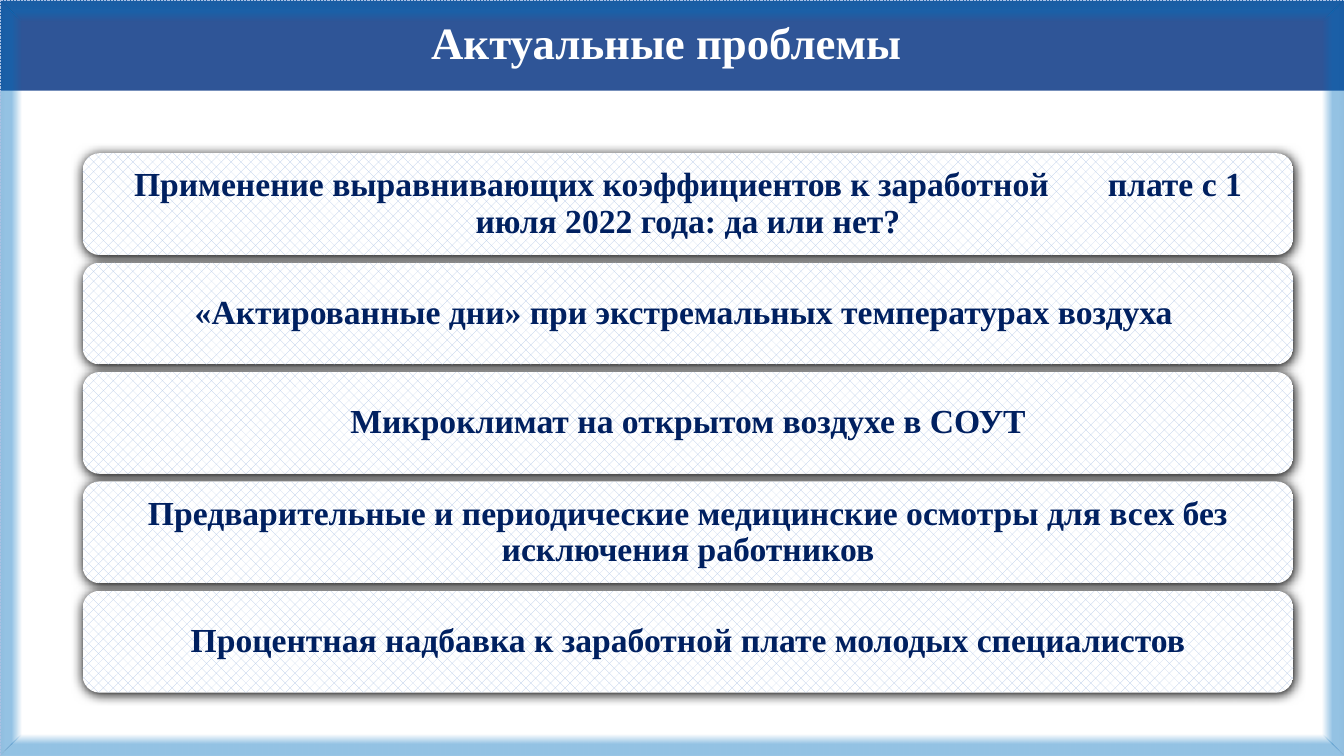
from lxml import etree
from pptx import Presentation, util as u
from pptx.dml.color import RGBColor
from pptx.enum import dml, shapes, text
from pptx.oxml.ns import qn

WHITE = RGBColor(0xFF, 0xFF, 0xFF)
BAND_BLUE = RGBColor(0x2F, 0x55, 0x97)
NAVY = RGBColor(0x00, 0x20, 0x60)
PALE_BLUE = RGBColor(0xB4, 0xC7, 0xE7)
EDGE_BLUE = RGBColor(0x00, 0x70, 0xC0)
OUTLINE_BLUE = RGBColor(0xAB, 0xC0, 0xE4)
FONT = "Times New Roman"

PROBLEMS = [
    "Применение выравнивающих коэффициентов к заработной плате с 1 июля 2022 года: да или нет?",
    "«Актированные дни» при экстремальных температурах воздуха ",
    "Микроклимат на открытом воздухе в СОУТ",
    "Предварительные и периодические медицинские осмотры для всех без исключения работников",
    "Процентная надбавка к заработной плате молодых специалистов",
]


def write(shape, content, size, color, inset=0.1, gap_after=None):
    """Write centred bold text; the space following gap_after is widened."""
    frame = shape.text_frame
    frame.word_wrap = True
    frame.auto_size = text.MSO_AUTO_SIZE.NONE
    frame.vertical_anchor = text.MSO_ANCHOR.MIDDLE
    frame.margin_left = frame.margin_right = u.Inches(inset)
    frame.margin_top = frame.margin_bottom = u.Inches(inset)
    paragraph = frame.paragraphs[0]
    paragraph.alignment = text.PP_ALIGN.CENTER
    paragraph.line_spacing = 0.9
    pieces = [content]
    if gap_after:
        before, word, after = content.partition(gap_after)
        pieces = [before + word, " ", after.lstrip()]
    for piece in pieces:
        run = paragraph.add_run()
        run.text = piece
        run.font.name = FONT
        run.font.size = u.Pt(size)
        run.font.bold = True
        run.font.color.rgb = color
        if piece == " ":
            run.font._element.set("spc", "3600")


def add_shadow(shape, opacity, blur, distance):
    """Drop a black shadow straight down; blur and distance in points."""
    shape.shadow.inherit = False
    effects = shape._element.spPr.find(qn("a:effectLst"))
    shadow = etree.SubElement(effects, qn("a:outerShdw"), blurRad=str(u.Pt(blur)),
                              dist=str(u.Pt(distance)), dir="5400000",
                              algn="ctr", rotWithShape="0")
    black = etree.SubElement(shadow, qn("a:srgbClr"), val="000000")
    etree.SubElement(black, qn("a:alpha"), val=str(opacity * 1000))


class ProblemsSlide:
    """Slide whose lengths are percentages of its width and height."""

    def __init__(self, deck):
        self.width, self.height = deck.slide_width, deck.slide_height
        self.slide = deck.slides.add_slide(deck.slide_layouts[5])
        self.slide.background.fill.solid()
        self.slide.background.fill.fore_color.rgb = WHITE

    def x(self, share):
        return round(self.width * share / 100)

    def y(self, share):
        return round(self.height * share / 100)

    def add_box(self, kind, left, top, width, height):
        return self.slide.shapes.add_shape(
            kind, self.x(left), self.y(top), self.x(width), self.y(height))

    def title(self, content, height):
        band = self.slide.shapes.title
        band.left, band.top = 0, 0
        band.width, band.height = self.width, self.y(height)
        band.fill.solid()
        band.fill.fore_color.rgb = BAND_BLUE
        write(band, content, 32, WHITE)

    def card(self, content, top, gap_after=None):
        card = self.add_box(shapes.MSO_SHAPE.ROUNDED_RECTANGLE, 6.15, top, 90.08, 13.47)
        card.fill.patterned()
        card.fill.pattern = dml.MSO_PATTERN.PERCENT_30
        card.fill.fore_color.rgb = PALE_BLUE
        card.fill.back_color.rgb = WHITE
        card.line.fill.background()
        add_shadow(card, 100, 8.5, 1)
        write(card, content, 24, NAVY, gap_after=gap_after)

    def edge(self, corners, angle):
        """Mitred strip of the frame, fading towards the slide's middle."""
        points = [(self.x(left), self.y(top)) for left, top in corners]
        builder = self.slide.shapes.build_freeform(*points[0])
        builder.add_line_segments(points[1:], close=True)
        strip = builder.convert_to_shape()
        strip.shadow.inherit = False
        strip.line.fill.background()
        strip.fill.gradient()
        strip.fill.gradient_angle = angle
        for stop, position in zip(strip.fill.gradient_stops, (0.55, 1)):
            stop.color.rgb = EDGE_BLUE
            stop.position = position
        colors = strip._element.spPr.iter(qn("a:srgbClr"))
        for color, opacity in zip(list(colors), (42, 0)):
            etree.SubElement(color, qn("a:alpha"), val=str(opacity * 1000))

    def frame(self, across, down):
        outer = [(0, 0), (100, 0), (100, 100), (0, 100)]
        inner = [(across, down), (100 - across, down),
                 (100 - across, 100 - down), (across, 100 - down)]
        for side, angle in enumerate((270, 180, 90, 0)):
            following = (side + 1) % 4
            self.edge([outer[side], outer[following], inner[following], inner[side]], angle)

    def outline(self):
        border = self.add_box(shapes.MSO_SHAPE.RECTANGLE, 0, 0, 100, 100)
        border.fill.background()
        border.line.color.rgb = OUTLINE_BLUE
        border.line.width = u.Pt(0.5)
        border.line.dash_style = dml.MSO_LINE.ROUND_DOT
        add_shadow(border, 32, 3.5, 2.2)


def main():
    deck = Presentation()
    deck.slide_width, deck.slide_height = u.Inches(13.33), u.Inches(7.5)
    page = ProblemsSlide(deck)
    page.title("Актуальные проблемы ", height=12)
    for row, problem in enumerate(PROBLEMS):
        page.card(problem, top=20.27 + 14.47 * row,
                  gap_after="заработной" if row == 0 else None)
    page.frame(across=1.6, down=2.8)
    page.outline()
    deck.save("out.pptx")


if __name__ == "__main__":
    main()
